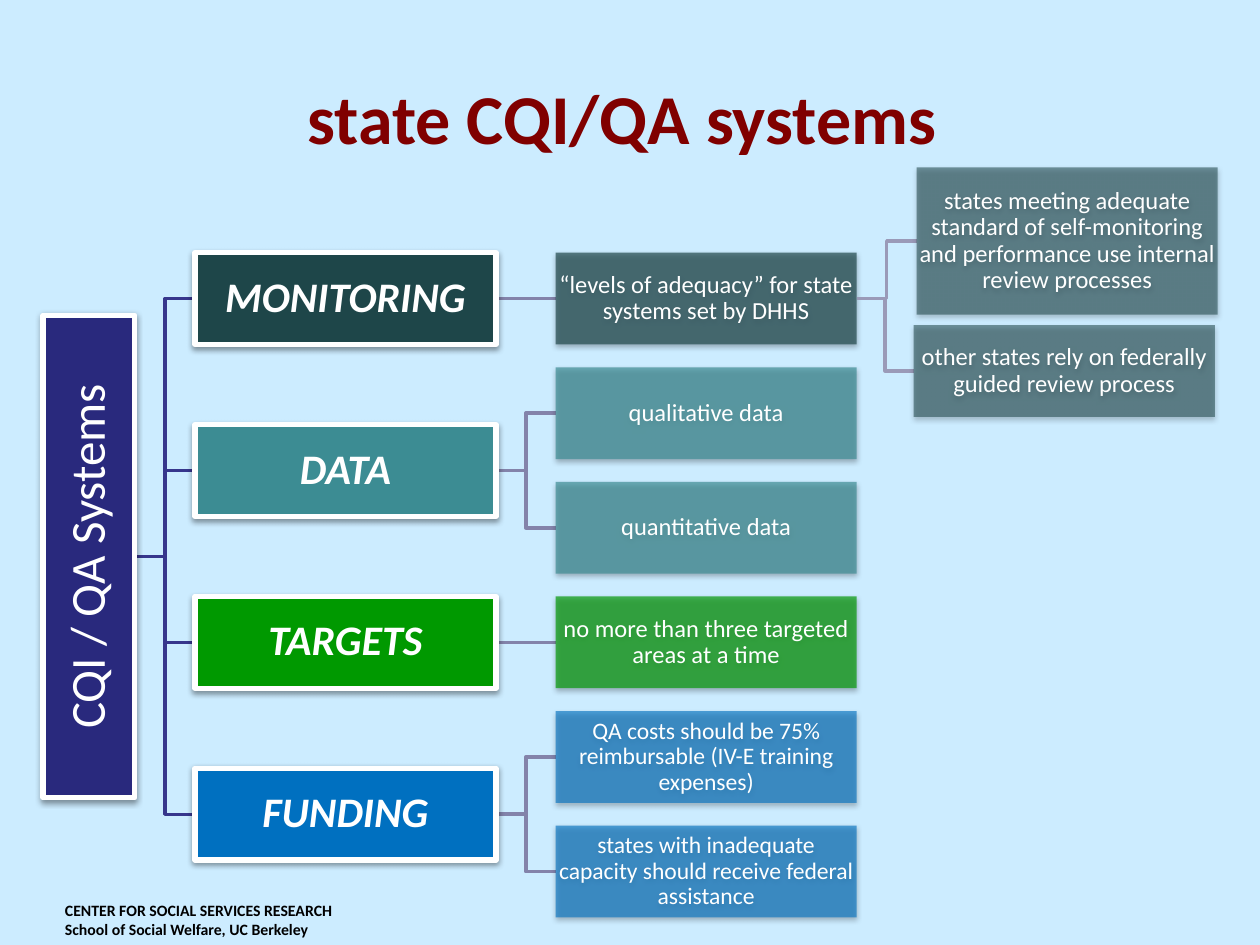
from lxml import etree
from pptx import Presentation
from pptx import util as u
from pptx.dml.color import RGBColor
from pptx.enum import shapes, text
from pptx.oxml import parse_xml
from pptx.oxml.ns import nsdecls, qn

SKY = RGBColor(0xCC, 0xEC, 0xFF)
MAROON = RGBColor(0x80, 0, 0)
BLACK = RGBColor(0, 0, 0)
WHITE = RGBColor(255, 255, 255)
NAVY = RGBColor(0x29, 0x29, 0x7D)
PINE = RGBColor(0x1E, 0x46, 0x49)
TEAL = RGBColor(0x3C, 0x8C, 0x93)
GREEN = RGBColor(0, 0x99, 0)
BLUE = RGBColor(0, 0x70, 0xC0)
TRUNK = RGBColor(0x36, 0x36, 0x8C)
LIMB = RGBColor(0x83, 0x83, 0xAA)
TWIG = RGBColor(0x9A, 0x9A, 0xB8)

# Lengths in cm: box size, column lefts, first row centre and row pitch
WIDE, HIGH = 6.07, 1.85
HEAD_X, LEAF_X, NOTE_X = 3.93, 11.2, 18.48
ROW, STEP = 6.02, 2.31
ROOT_X, ROOT_W, ROOT_H = 0.87, 1.85, 9.73

# Heading, colour, leaf opacity in percent, leaf text size, leaves
TREE = [
    ("MONITORING", PINE, 68, 14,
     ["“levels of adequacy” for state systems set by DHHS"]),
    ("DATA", TEAL, 68, 14, ["qualitative data", "quantitative data"]),
    ("TARGETS", GREEN, 67, 14, ["no more than three targeted areas at a time"]),
    ("FUNDING", BLUE, 62, 13.5,
     ["QA costs should be 75% reimbursable (IV-E training expenses)",
      "states with inadequate capacity should receive federal assistance"]),
]
# Left, centre, height and text of the third level
NOTES = [
    (NOTE_X, 4.86, 2.97, "states meeting adequate standard of self-monitoring "
     "and performance use internal review processes"),
    (18.42, 7.48, HIGH,
     "other states rely on federally guided review process"),
]

prs = Presentation()
prs.slide_width, prs.slide_height = u.Cm(25.4), u.Cm(19.05)
slide = prs.slides.add_slide(prs.slide_layouts[6])
slide.background.fill.solid()
slide.background.fill.fore_color.rgb = SKY


def box(words, x, mid, w, h, fill, size, alpha=None):
    """Shadowed box centred on height mid; solid ones get a white frame."""
    rect = slide.shapes.add_shape(shapes.MSO_SHAPE.RECTANGLE, u.Cm(x),
                                  u.Cm(mid - h / 2), u.Cm(w), u.Cm(h))
    rect.fill.solid()
    rect.fill.fore_color.rgb = fill
    if alpha:
        rect.line.fill.background()
        tint = rect.fill._xPr.find(qn("a:solidFill"))[0]
        etree.SubElement(tint, qn("a:alpha")).set("val", str(alpha * 1000))
    else:
        rect.line.color.rgb = WHITE
        rect.line.width = u.Pt(3)
    rect._element.spPr.append(parse_xml(
        f'<a:effectLst {nsdecls("a")}><a:outerShdw blurRad="40000" dist="20000" '
        'dir="5400000" rotWithShape="0"><a:srgbClr val="000000">'
        '<a:alpha val="38000"/></a:srgbClr></a:outerShdw></a:effectLst>'))
    frame = rect.text_frame
    frame.word_wrap = True
    frame.vertical_anchor = text.MSO_ANCHOR.MIDDLE
    frame.margin_left = frame.margin_right = u.Cm(0.03)
    frame.margin_top = frame.margin_bottom = u.Cm(0.03)
    frame.text = words
    para = frame.paragraphs[0]
    para.alignment = text.PP_ALIGN.CENTER
    para.line_spacing = 0.9
    font = para.runs[0].font
    font.name, font.size, font.color.rgb = "Calibri", u.Pt(size), WHITE
    return rect


def link(x1, y1, x2, y2, color):
    """Line between two points, with an elbow if the heights differ."""
    kind = shapes.MSO_CONNECTOR
    wire = slide.shapes.add_connector(
        kind.STRAIGHT if y1 == y2 else kind.ELBOW,
        u.Cm(x1), u.Cm(y1), u.Cm(x2), u.Cm(y2))
    wire.line.color.rgb = color
    wire.line.width = u.Pt(2)
    etree.SubElement(wire._element.spPr, qn("a:effectLst"))
    return wire


# Title and footer
for words, x, y, w, h, size, color, align, anchor in [
    ("state CQI/QA systems ", 1.27, 0.76, 22.86, 3.18, 40, MAROON,
     text.PP_ALIGN.CENTER, text.MSO_ANCHOR.MIDDLE),
    ("CENTER FOR SOCIAL SERVICES RESEARCH\vSchool of Social Welfare, UC Berkeley",
     1.06, 18.03, 7.42, 1.02, 9, BLACK,
     text.PP_ALIGN.LEFT, text.MSO_ANCHOR.TOP),
]:
    frame = slide.shapes.add_textbox(
        u.Cm(x), u.Cm(y), u.Cm(w), u.Cm(h)).text_frame
    frame.word_wrap = True
    frame.vertical_anchor = anchor
    frame.text = words
    frame.paragraphs[0].alignment = align
    for run in frame.paragraphs[0].runs:
        run.font.name, run.font.size = "Calibri", u.Pt(size)
        run.font.bold, run.font.color.rgb = True, color

# Row centres: each heading sits midway between its leaves
rows, heads = [], []
count = 0
for branch in TREE:
    mids = [ROW + STEP * (count + i) for i in range(len(branch[4]))]
    count += len(mids)
    rows.append(mids)
    heads.append(sum(mids) / len(mids))
center = (heads[0] + heads[-1]) / 2

# Trunk and root, turned to read upwards
for mid in heads:
    link(ROOT_X + ROOT_W, center, HEAD_X, mid, TRUNK)
root = box("CQI / QA Systems", ROOT_X + (ROOT_W - ROOT_H) / 2, center,
           ROOT_H, ROOT_W, NAVY, 28)
root.rotation = 270

# Headings with their leaves
for (name, fill, alpha, size, leaves), mids, mid in zip(TREE, rows, heads):
    wires = [link(HEAD_X + WIDE, mid, LEAF_X, y, LIMB) for y in mids]
    head = box(name, HEAD_X, mid, WIDE, HIGH, fill, 24)
    font = head.text_frame.paragraphs[0].runs[0].font
    font.bold = font.italic = True
    for words, y, wire in zip(leaves, mids, wires):
        leaf = box(words, LEAF_X, y, WIDE, HIGH, fill, size, alpha)
        if len(leaves) == 1:
            wire.begin_connect(head, 3)
            wire.end_connect(leaf, 1)

# Third level beside the first leaf
for x, mid, h, words in NOTES:
    link(LEAF_X + WIDE, ROW, x, mid, TWIG)
    box(words, x, mid, WIDE, h, PINE, 14, 54)

prs.save("out.pptx")
